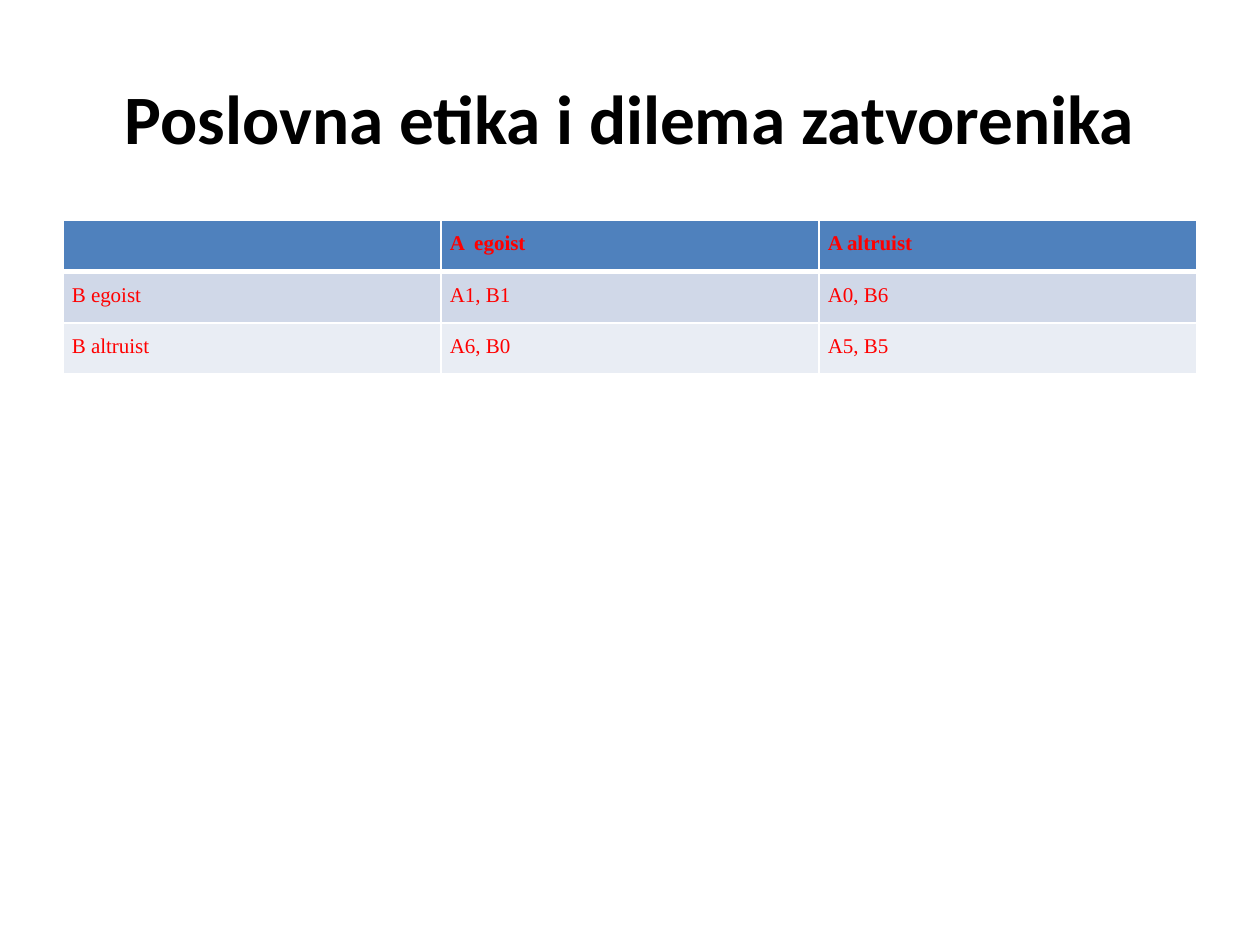
from lxml import etree
from pptx import Presentation
from pptx.dml.color import RGBColor
from pptx.enum.text import MSO_ANCHOR, MSO_AUTO_SIZE, PP_ALIGN
from pptx.oxml.ns import qn
from pptx.util import Inches, Pt

CENTER, JUSTIFY = PP_ALIGN.CENTER, PP_ALIGN.JUSTIFY
MIDDLE = MSO_ANCHOR.MIDDLE
NO_FIT = MSO_AUTO_SIZE.NONE
COLORS = {"title": "000000", "text": "FF0000", "edge": "FFFFFF",
          "head": "4F81BD", "odd": "D0D8E8", "even": "E9EDF4"}
ROWS = [["", "A  egoist", "A altruist"],
        ["B egoist", "A1, B1", "A0, B6"],
        ["B altruist", "A6, B0", "A5, B5"]]
FILLS = ["head", "odd", "even"]


def color(name):
    """Return the named colour."""
    return RGBColor.from_string(COLORS[name])


def add_run(para, text, font, size, tint, bold):
    """Add one formatted run to a paragraph."""
    run = para.add_run()
    run.text = text
    run.font.name = font
    run.font.size = Pt(size)
    run.font.bold = bold
    run.font.color.rgb = color(tint)


def set_edges(cell, widths):
    """Draw the cell borders, given widths in points by side."""
    props = cell._tc.get_or_add_tcPr()
    for spot, (side, width) in enumerate(widths.items()):
        line = etree.Element(qn(f"a:ln{side}"), w=str(Pt(width)))
        fill = etree.SubElement(line, qn("a:solidFill"))
        etree.SubElement(fill, qn("a:srgbClr"), val=COLORS["edge"])
        props.insert(spot, line)


def add_title(slide, left, top, width, height):
    """Place and format the slide title."""
    title = slide.shapes.title
    title.left, title.top = left, top
    title.width, title.height = width, height
    frame = title.text_frame
    frame.word_wrap = True
    frame.auto_size = NO_FIT
    frame.vertical_anchor = MIDDLE
    para = frame.paragraphs[0]
    para.alignment = CENTER
    add_run(para, "Poslovna etika i dilema zatvorenika",
            "Calibri", 39.6, "title", True)


def add_payoffs(slide, left, top, width, height):
    """Place the payoff table with equal rows and columns."""
    table = slide.shapes.add_table(
        len(ROWS), len(ROWS[0]), left, top, width, height).table
    for r, texts in enumerate(ROWS):
        for c, text in enumerate(texts):
            cell = table.cell(r, c)
            cell.margin_left = cell.margin_right = Inches(0.07)
            cell.margin_top = cell.margin_bottom = 0
            cell.fill.solid()
            cell.fill.fore_color.rgb = color(FILLS[r])
            set_edges(cell, {"L": 1, "R": 1, "T": 3 if r == 1 else 1,
                             "B": 3 if r == 0 else 1})
            if text:
                para = cell.text_frame.paragraphs[0]
                para.alignment = JUSTIFY
                para.line_spacing = 1.5
                add_run(para, text, "Times New Roman", 12, "text", r == 0)


def main():
    """Build and save the slide."""
    deck = Presentation()
    deck.slide_width, deck.slide_height = Inches(10), Inches(7.5)
    slide = deck.slides.add_slide(deck.slide_layouts.get_by_name("Title Only"))
    left, width = Inches(0.5), Inches(9)
    add_title(slide, left, Inches(0.3), width, Inches(1.25))
    add_payoffs(slide, left, Inches(1.75), width, Inches(1.22))
    deck.save("out.pptx")


if __name__ == "__main__":
    main()
